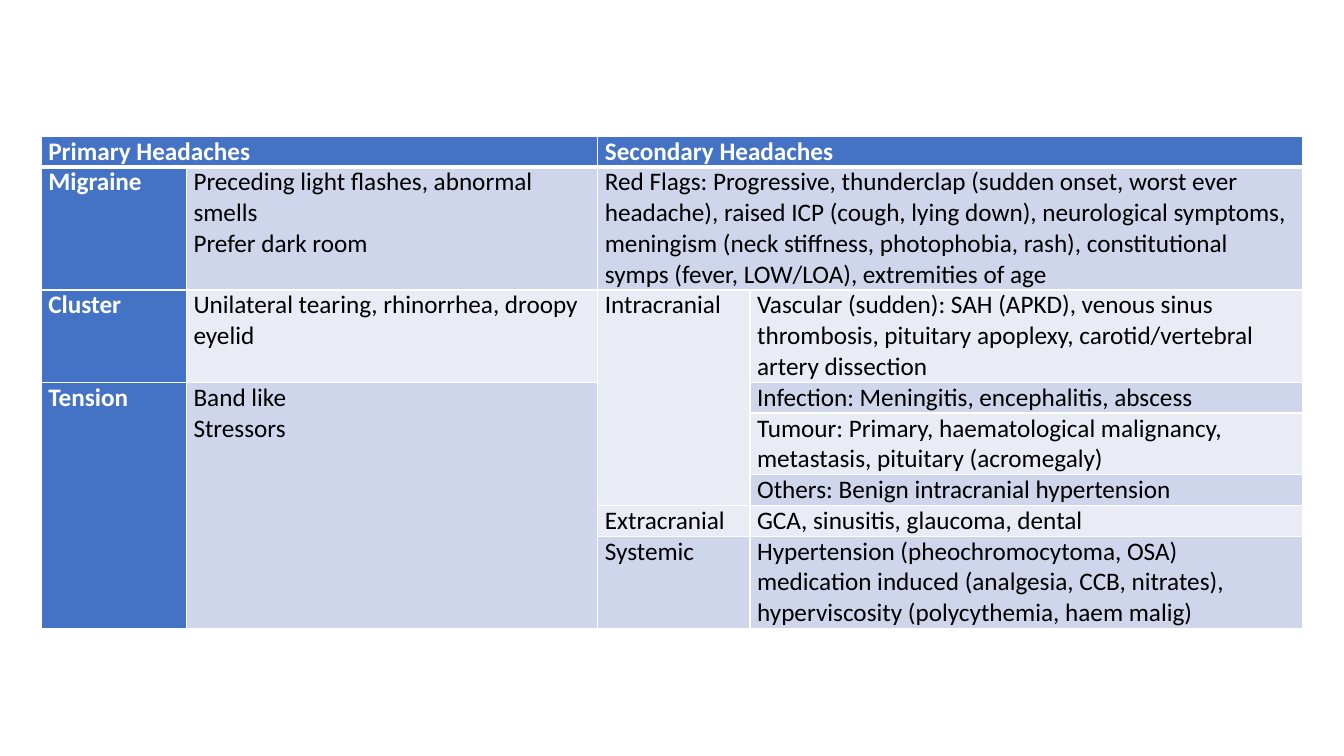
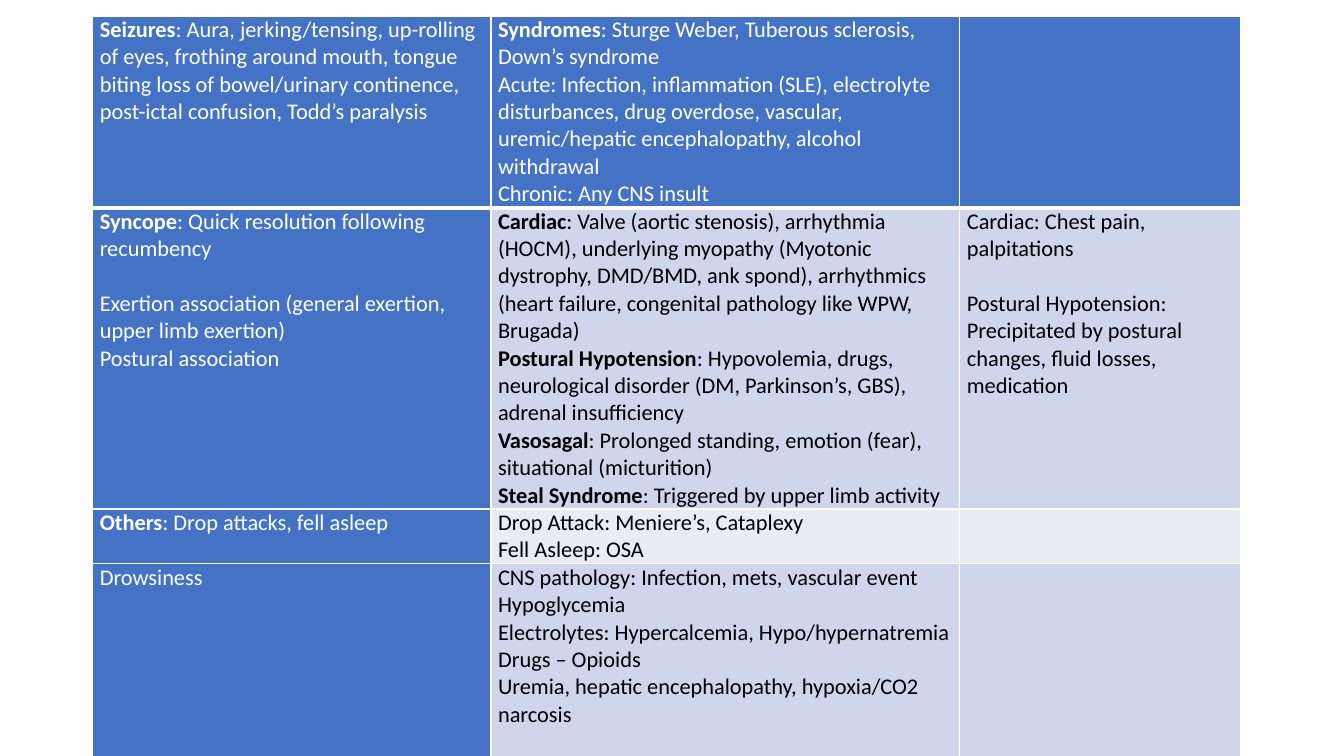
"""Build two slides of clinical tables on headaches and lost consciousness."""
from dataclasses import dataclass
from typing import Optional

from lxml.etree import SubElement
from pptx import Presentation
from pptx.dml.color import RGBColor
from pptx.oxml.ns import qn
from pptx.slide import Slide
from pptx.table import _Cell
from pptx.util import Inches, Pt


@dataclass(frozen=True)
class Theme:
    """Colours, type and line sizes shared by all slides."""
    font: str = "Calibri"
    head: str = "4472C4"
    bands: tuple[str, str] = ("E9EBF5", "CFD5EA")
    light: str = "FFFFFF"
    dark: str = "000000"
    large: int = 18
    small: int = 16
    thin: int = 1
    thick: int = 3
    inset: float = 0.07


@dataclass(frozen=True)
class Item:
    """Cell text with *bold* marks, its span, and a paragraph set apart."""
    text: str = ""
    rows: int = 1
    cols: int = 1
    apart: Optional[int] = None


@dataclass(frozen=True)
class Chart:
    """A table's place, column widths, row heights, type size and cells."""
    left: float
    top: float
    widths: tuple[float, ...]
    heights: tuple[float, ...]
    size: int
    cells: tuple[tuple[Optional[Item], ...], ...]


THEME = Theme()

ACHES = Chart(
    0.41, 1.35, (1.44, 4.08, 1.51, 5.48),
    (0.29, 0.87, 0.87, 0.29, 0.58, 0.29, 0.29, 0.87), THEME.large,
    (
        (Item("*Primary Headaches*", cols=2), None,
         Item("*Secondary Headaches*", cols=2), None),
        (Item("*Migraine*"),
         Item("Preceding light flashes, abnormal smells\nPrefer dark room"),
         Item("Red Flags: Progressive, thunderclap (sudden onset, worst ever "
              "headache), raised ICP (cough, lying down), neurological "
              "symptoms, meningism (neck stiffness, photophobia, rash), "
              "constitutional symps (fever, LOW/LOA), extremities of age",
              cols=2), None),
        (Item("*Cluster*"),
         Item("Unilateral tearing, rhinorrhea, droopy eyelid"),
         Item("Intracranial", rows=4),
         Item("Vascular (sudden): SAH (APKD), venous sinus thrombosis, "
              "pituitary apoplexy, carotid/vertebral artery dissection")),
        (Item("*Tension*", rows=5), Item("Band like\nStressors", rows=5), None,
         Item("Infection: Meningitis, encephalitis, abscess")),
        (None, None, None,
         Item("Tumour: Primary, haematological malignancy, metastasis, "
              "pituitary (acromegaly)")),
        (None, None, None, Item("Others: Benign intracranial hypertension")),
        (None, None, Item("Extracranial"),
         Item("GCA, sinusitis, glaucoma, dental")),
        (None, None, Item("Systemic"),
         Item("Hypertension (pheochromocytoma, OSA) medication induced "
              "(analgesia, CCB, nitrates), hyperviscosity (polycythemia, "
              "haem malig)")),
    ),
)

FAINTS = Chart(
    0.92, 0.16, (3.95, 4.65, 2.78), (1.68, 2.88, 0.48, 1.92), THEME.small,
    (
        (Item("*Seizures*: Aura, jerking/tensing, up-rolling of eyes, "
              "frothing around mouth, tongue biting loss of bowel/urinary "
              "continence, post-ictal confusion, Todd’s paralysis"),
         Item("*Syndromes*: Sturge Weber, Tuberous sclerosis, "
              "Down’s syndrome\n"
              "Acute: Infection, inflammation (SLE), electrolyte "
              "disturbances, drug overdose, vascular, uremic/hepatic "
              "encephalopathy, alcohol withdrawal\n"
              "Chronic: Any CNS insult"),
         Item()),
        (Item("*Syncope*: Quick resolution following recumbency\n"
              "Exertion association (general exertion, upper limb exertion)\n"
              "Postural association", apart=1),
         Item("*Cardiac*: Valve (aortic stenosis), arrhythmia (HOCM), "
              "underlying myopathy (Myotonic dystrophy, DMD/BMD, ank spond), "
              "arrhythmics (heart failure, congenital pathology like WPW, "
              "Brugada)\n"
              "*Postural Hypotension*: Hypovolemia, drugs, neurological "
              "disorder (DM, Parkinson’s, GBS), adrenal insufficiency\n"
              "*Vasosagal*: Prolonged standing, emotion (fear), situational "
              "(micturition)\n"
              "*Steal Syndrome*: Triggered by upper limb activity"),
         Item("Cardiac: Chest pain, palpitations\n"
              "Postural Hypotension: Precipitated by postural changes, fluid "
              "losses, medication", apart=1)),
        (Item("*Others*: Drop attacks, fell asleep"),
         Item("Drop Attack: Meniere’s, Cataplexy\nFell Asleep: OSA"),
         Item()),
        (Item("Drowsiness"),
         Item("CNS pathology: Infection, mets, vascular event\n"
              "Hypoglycemia\n"
              "Electrolytes: Hypercalcemia, Hypo/hypernatremia\n"
              "Drugs – Opioids\n"
              "Uremia, hepatic encephalopathy, hypoxia/CO2 narcosis"),
         Item()),
    ),
)


def write(cell: _Cell, text: str, *, size: int, color: str,
          apart: Optional[int] = None) -> None:
    """Write lines as paragraphs, with *marked* words in bold."""
    frame = cell.text_frame
    for row, line in enumerate(text.split("\n")):
        para = frame.add_paragraph() if row else frame.paragraphs[0]
        para.font.size = Pt(size)
        if row == apart:
            para.space_before = Pt(size * 1.22)
        for part, words in enumerate(line.split("*")):
            if words:
                run = para.add_run()
                run.text = words
                run.font.name = THEME.font
                run.font.size = Pt(size)
                run.font.bold = part % 2 == 1
                run.font.color.rgb = RGBColor.from_string(color)


def edge(cell: _Cell, row: int) -> None:
    """Rule a cell in white, thicker under the header row."""
    props = cell._tc.get_or_add_tcPr()
    for side in ("lnL", "lnR", "lnT", "lnB"):
        thick = (row, side) in ((0, "lnB"), (1, "lnT"))
        width = THEME.thick if thick else THEME.thin
        line = SubElement(props, qn(f"a:{side}"), w=str(Pt(width)))
        fill = SubElement(line, qn("a:solidFill"))
        SubElement(fill, qn("a:srgbClr"), val=THEME.light)


def draw(slide: Slide, chart: Chart) -> None:
    """Draw a chart's cells as a banded table."""
    table = slide.shapes.add_table(
        len(chart.heights), len(chart.widths),
        Inches(chart.left), Inches(chart.top),
        Inches(sum(chart.widths)), Inches(sum(chart.heights))).table
    table.first_col = True
    for column, width in zip(table.columns, chart.widths):
        column.width = Inches(width)
    for line, height in zip(table.rows, chart.heights):
        line.height = Inches(height)
    for row, items in enumerate(chart.cells):
        for col, item in enumerate(items):
            cell = table.cell(row, col)
            head = row == 0 or col == 0
            edge(cell, row)
            cell.fill.solid()
            cell.fill.fore_color.rgb = RGBColor.from_string(
                THEME.head if head else THEME.bands[row % 2])
            cell.margin_left = cell.margin_right = Inches(THEME.inset)
            cell.margin_top = cell.margin_bottom = Inches(0)
            if item is None:
                continue
            if item.rows * item.cols > 1:
                cell.merge(table.cell(row + item.rows - 1,
                                      col + item.cols - 1))
            write(cell, item.text, size=chart.size, apart=item.apart,
                  color=THEME.light if head else THEME.dark)


def main() -> None:
    """Build and save the deck."""
    deck = Presentation()
    deck.slide_width, deck.slide_height = Inches(13.33), Inches(7.5)
    for chart in (ACHES, FAINTS):
        draw(deck.slides.add_slide(deck.slide_layouts[6]), chart)
    deck.save("out.pptx")


if __name__ == "__main__":
    main()
